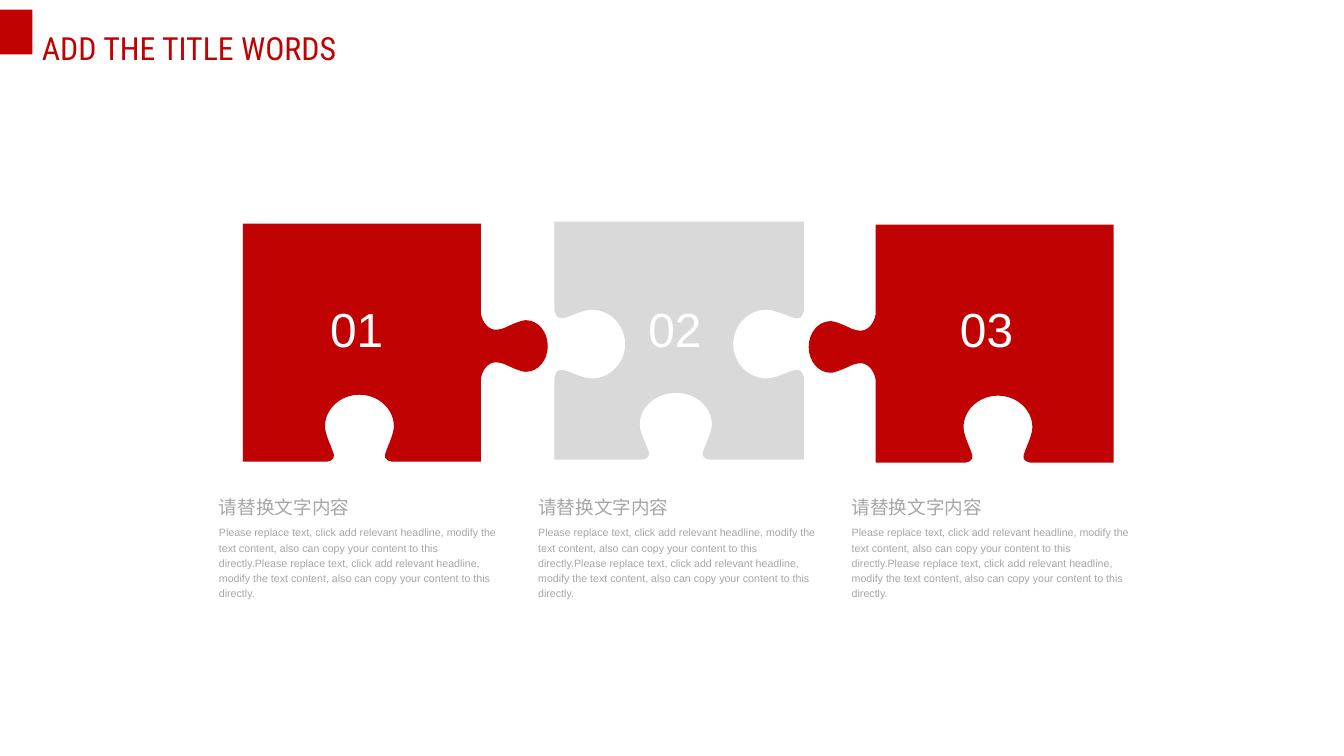
from lxml import etree
from pptx import Presentation
from pptx.dml.color import RGBColor
from pptx.enum.shapes import MSO_SHAPE
from pptx.enum.text import MSO_AUTO_SIZE, PP_ALIGN
from pptx.oxml.ns import qn
from pptx.util import Inches, Pt

RECTANGLE = MSO_SHAPE.RECTANGLE
GROW = MSO_AUTO_SIZE.SHAPE_TO_FIT_TEXT
LEFT, CENTER = PP_ALIGN.LEFT, PP_ALIGN.CENTER

# Content
TITLE = "ADD THE TITLE WORDS"
HEADING = "请替换文字内容"
SENTENCE = ("Please replace text, click add relevant headline, modify the text "
            "content, also can copy your content to this directly.")
RED, SILVER, GRAY, WHITE = "C00202", "D9D9D9", "A6A6A6", "FFFFFF"

# Half outlines as Bezier points: (distance out of the edge, distance along it)
TAB = [(0, -0.34), (0.02, -0.24), (0.08, -0.17), (0.16, -0.17),
       (0.19, -0.17), (0.22, -0.18), (0.25, -0.19),
       (0.31, -0.22), (0.42, -0.27), (0.47, -0.27),
       (0.6, -0.27), (0.7, -0.15), (0.7, 0)]
SOCKET = [(0, -0.35), (-0.01, -0.32), (-0.02, -0.27), (-0.07, -0.27),
          (-0.08, -0.27), (-0.1, -0.27), (-0.12, -0.28),
          (-0.14, -0.28), (-0.3, -0.36), (-0.39, -0.36),
          (-0.58, -0.36), (-0.74, -0.2), (-0.74, 0)]
NOTCH = [(0, -0.34), (0, -0.31), (-0.02, -0.28), (-0.04, -0.27),
         (-0.06, -0.26), (-0.09, -0.27), (-0.11, -0.28),
         (-0.13, -0.28), (-0.28, -0.36), (-0.37, -0.36),
         (-0.55, -0.36), (-0.7, -0.2), (-0.7, 0)]

# Number, fill, left, right, middle height, notch centre, notch stretch,
# left joint, right joint, number left, text left
PIECES = [
    ("01 ", RED, 2.54, 5.03, 3.62, 3.76, 1, None, TAB, 3.35, 2.29),
    ("02 ", SILVER, 5.8, 8.41, 3.6, 7.07, 1.05, SOCKET, SOCKET, 6.68, 5.63),
    ("03 ", RED, 9.16, 11.65, 3.63, 10.44, 1, TAB, None, 9.94, 8.91),
]
RISE, DROP = 1.28, 1.21

deck = Presentation()
deck.slide_width, deck.slide_height = Inches(14.06), Inches(7.91)
page = deck.slides.add_slide(deck.slide_layouts[6])


def color(value):
    return RGBColor.from_string(value)


def paint(shape, fill):
    shape.shadow.inherit = False
    shape.fill.solid()
    shape.fill.fore_color.rgb = color(fill)
    shape.line.fill.background()


def add_text(text, left, top, width, height, size, ink, font="Arial",
             spacing=1, align=LEFT, wrap=True, inset=True):
    box = page.shapes.add_textbox(Inches(left), Inches(top), Inches(width), Inches(height))
    frame = box.text_frame
    frame.word_wrap = wrap
    frame.auto_size = GROW
    if not inset:
        frame.margin_left = frame.margin_right = 0
        frame.margin_top = frame.margin_bottom = 0
    para = frame.paragraphs[0]
    para.text = text
    para.alignment = align
    para.line_spacing = spacing
    para.font.size = Pt(size)
    para.font.name = font
    para.font.color.rgb = color(ink)


def joint_points(half):
    """Mirror the half outline; every point after the first belongs to a curve."""
    if half is None:
        return []
    points = half + [(out, -along) for out, along in reversed(half[:-1])]
    return [(out, along, index > 0) for index, (out, along) in enumerate(points)]


def bend(shape, curved):
    """Join each three segments that belong to a curve into one Bezier segment."""
    segments = list(shape._element.iter(qn("a:lnTo")))
    controls = [segment for segment, flag in zip(segments, curved) if flag]
    for first, second, third in zip(controls[::3], controls[1::3], controls[2::3]):
        curve = etree.Element(qn("a:cubicBezTo"))
        first.addprevious(curve)
        for segment in (first, second, third):
            curve.append(segment[0])
            segment.getparent().remove(segment)


def add_piece(fill, left, right, middle, notch_center, stretch, left_joint, right_joint):
    top, bottom = middle - RISE, middle + DROP
    outline = [(left, top, False), (right, top, False)]
    outline += [(right + out, middle + along, curved)
                for out, along, curved in joint_points(right_joint)]
    outline.append((right, bottom, False))
    outline += [(notch_center - along * stretch, bottom + out, curved)
                for out, along, curved in joint_points(NOTCH)]
    outline.append((left, bottom, False))
    outline += [(left - out, middle - along, curved)
                for out, along, curved in joint_points(left_joint)]
    points = [(Inches(x), Inches(y)) for x, y, _ in outline]
    builder = page.shapes.build_freeform(*points[0])
    builder.add_line_segments(points[1:], close=True)
    piece = builder.convert_to_shape()
    bend(piece, [curved for _, _, curved in outline[1:]])
    paint(piece, fill)


# Title
paint(page.shapes.add_shape(RECTANGLE, 0, Inches(0.1), Inches(0.34), Inches(0.47)), RED)
add_text(TITLE, 0.34, 0.05, 3.54, 0.63, 24, RED, font="Roboto Condensed", spacing=1.5)

# Puzzle pieces with their numbers and captions
for number, fill, left, right, middle, notch, stretch, joint_l, joint_r, number_left, text_left in PIECES:
    add_piece(fill, left, right, middle, notch, stretch, joint_l, joint_r)
    add_text(number, number_left, 3.09, 0.9, 0.71, 36, WHITE, align=CENTER, wrap=False)
    add_text(HEADING, text_left, 5.14, 1.55, 0.26, 14, GRAY, spacing=1.2, inset=False)
    add_text(SENTENCE * 2, text_left, 5.48, 2.95, 0.81, 8, GRAY, spacing=1.2, inset=False)

deck.save("out.pptx")
